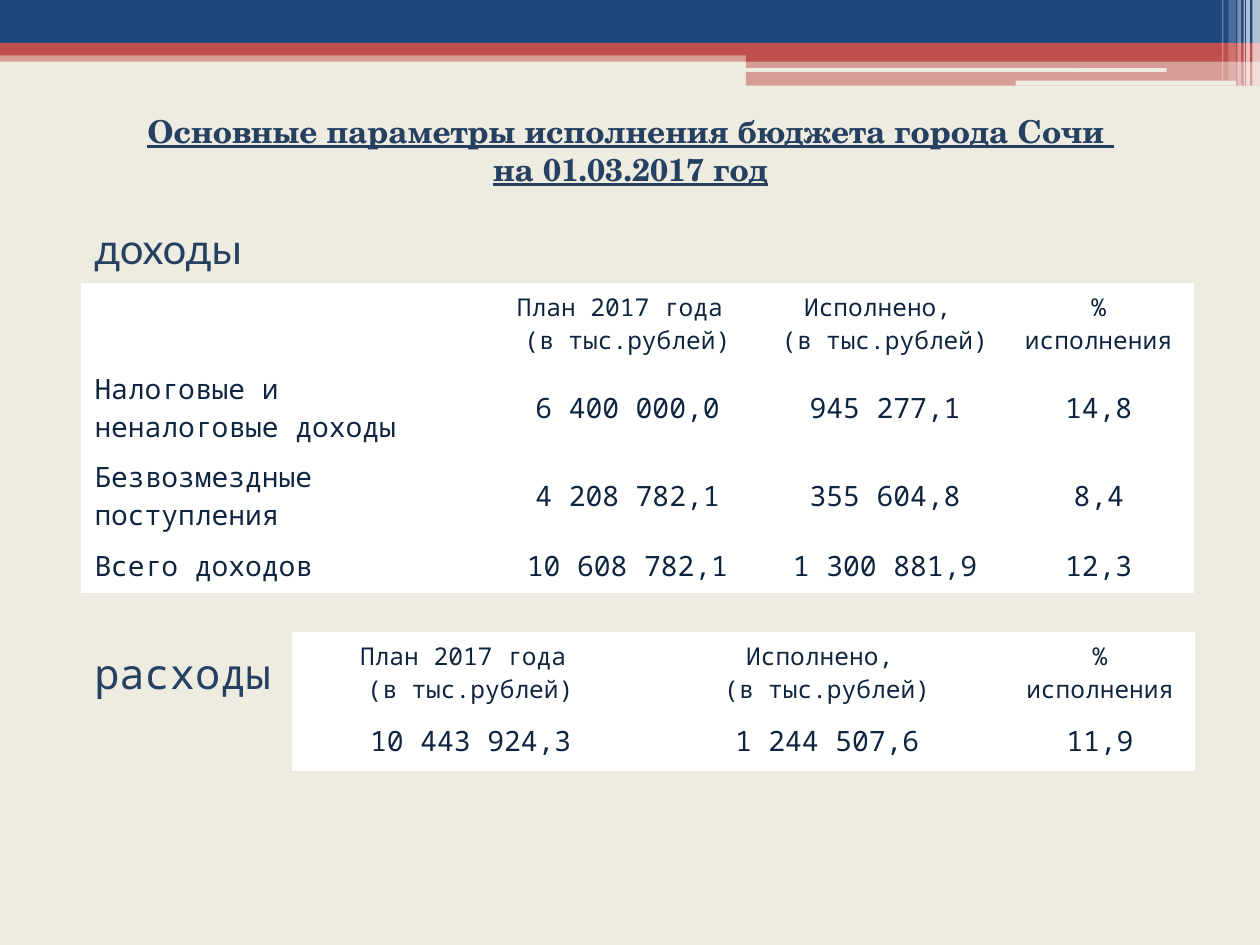
from lxml.etree import SubElement
from pptx import Presentation
from pptx.dml.color import RGBColor
from pptx.enum.shapes import MSO_SHAPE
from pptx.enum.text import MSO_ANCHOR, MSO_AUTO_SIZE, PP_ALIGN
from pptx.oxml import parse_xml
from pptx.oxml.ns import nsdecls, qn
from pptx.util import Inches, Pt

COLORS = {"paper": "EEECE1", "navy": "1F497D", "red": "C0504D",
          "white": "FFFFFF", "title": "254061", "ink": "0F243E"}
MONO = "Noto Sans Mono"

# Header bands: left, top, width, height, color, opacity in percent
BANDS = [
    (0, 0.4, 10, 0.09, "red", 50),
    (0, 0, 10, 0.34, "navy", 100),
    (0, 0.34, 10, 0.1, "red", 100),
    (5.92, 0.39, 4.08, 0.1, "red", 100),
    (5.92, 0.48, 4.08, 0.2, "red", 50),
]
SLITS = [(5.91, 0.54, 3.35, 0.03), (8.06, 0.64, 1.75, 0.04)]
# Light stripes at the right: left, width, height, opacity
STRIPES = [
    (9.94, 0.06, 0.68, 65), (9.89, 0.03, 0.68, 65), (9.87, 0.01, 0.68, 60),
    (9.82, 0.03, 0.68, 40), (9.75, 0.06, 0.64, 20), (9.7, 0.01, 0.64, 30),
]

TITLE = ["Основные параметры исполнения бюджета города Сочи ",
         "на 01.03.2017 год"]
HEADS = ["План 2017 года \n(в тыс.рублей)", "Исполнено, \n(в тыс.рублей)",
         "% исполнения"]
INCOME = [
    [""] + HEADS,
    ["Налоговые и неналоговые доходы", "6 400 000,0", "945 277,1", "14,8"],
    ["Безвозмездные поступления", "4 208 782,1", "355 604,8", "8,4"],
    ["Всего доходов", "10 608 782,1", "1 300 881,9", "12,3"],
]
SPENDING = [HEADS, ["10 443 924,3", "1 244 507,6", "11,9"]]


def rgb(name):
    return RGBColor.from_string(COLORS[name])


def add_band(slide, box, color, alpha=100, kind=MSO_SHAPE.RECTANGLE):
    band = slide.shapes.add_shape(kind, *map(Inches, box))
    band.shadow.inherit = False
    band.line.fill.background()
    band.fill.solid()
    band.fill.fore_color.rgb = rgb(color)
    if alpha < 100:
        tint = band.fill._xPr.find(qn("a:solidFill"))[0]
        SubElement(tint, qn("a:alpha")).set("val", str(alpha * 1000))


def style(par, face, size, color, align=None):
    par.font.name, par.font.size = face, Pt(size)
    par.font.color.rgb = rgb(color)
    par.alignment = align


def add_text(slide, box, lines, face, size, align=None, strong=None):
    frame = slide.shapes.add_textbox(*map(Inches, box)).text_frame
    frame.word_wrap = True
    frame.auto_size = MSO_AUTO_SIZE.SHAPE_TO_FIT_TEXT
    frame.text = "\n".join(lines)
    for par in frame.paragraphs:
        style(par, face, size, "title", align)
        par.font.bold = par.font.underline = strong


def add_edges(cell, base):
    props = cell._tc.get_or_add_tcPr()
    for i, side in enumerate("LRTB"):
        width = Pt(base if side == "B" else 1)
        props.insert(i, parse_xml(
            f'<a:ln{side} {nsdecls("a")} w="{width}"><a:solidFill>'
            f'<a:srgbClr val="{COLORS["white"]}"/></a:solidFill></a:ln{side}>'))


def add_grid(slide, box, data, widths, heights):
    shape = slide.shapes.add_table(len(data), len(widths), *map(Inches, box))
    grid = shape.table
    grid.first_row = grid.horz_banding = False
    for col, width in zip(grid.columns, widths):
        col.width = Inches(width)
    for row, height in zip(grid.rows, heights):
        row.height = Inches(height)
    shape.height = Inches(box[3])
    for r, line in enumerate(data):
        for c, text in enumerate(line):
            cell = grid.cell(r, c)
            cell.text = text
            cell.fill.solid()
            cell.fill.fore_color.rgb = rgb("white")
            add_edges(cell, 1 if r else 3)
            # Row names stay at the top left, figures are centred
            named = r > 0 and len(line) > len(HEADS) and c == 0
            if r and not named:
                cell.vertical_anchor = MSO_ANCHOR.MIDDLE
            for par in cell.text_frame.paragraphs:
                style(par, MONO, 16 if r else 14, "ink",
                      None if named else PP_ALIGN.CENTER)


def main():
    deck = Presentation()
    deck.slide_width, deck.slide_height = Inches(10), Inches(7.5)
    slide = deck.slides.add_slide(deck.slide_layouts[6])
    slide.background.fill.solid()
    slide.background.fill.fore_color.rgb = rgb("paper")

    # Header decoration
    for *box, color, alpha in BANDS:
        add_band(slide, box, color, alpha)
    for box in SLITS:
        add_band(slide, box, "paper", kind=MSO_SHAPE.ROUNDED_RECTANGLE)
    for left, width, height, alpha in STRIPES:
        add_band(slide, (left, 0, width, height), "white", alpha)

    # Income, spending and title
    add_grid(slide, (0.65, 2.25, 8.82, 2.01), INCOME,
             [3.23, 2.2, 1.89, 1.5], [0.41] * 4)
    add_text(slide, (0.65, 1.72, 2.2, 0.5), ["доходы"], "Lato", 24)
    add_text(slide, (0.65, 5.09, 2.2, 0.5), ["расходы"], MONO, 24)
    add_grid(slide, (2.32, 5.02, 7.17, 1.09), SPENDING,
             [2.83, 2.83, 1.5], [0.62, 0.47])
    add_text(slide, (0.24, 0.84, 9.53, 0.71), TITLE, "TeX Gyre Schola", 18,
             PP_ALIGN.CENTER, True)

    deck.save("out.pptx")


if __name__ == "__main__":
    main()
